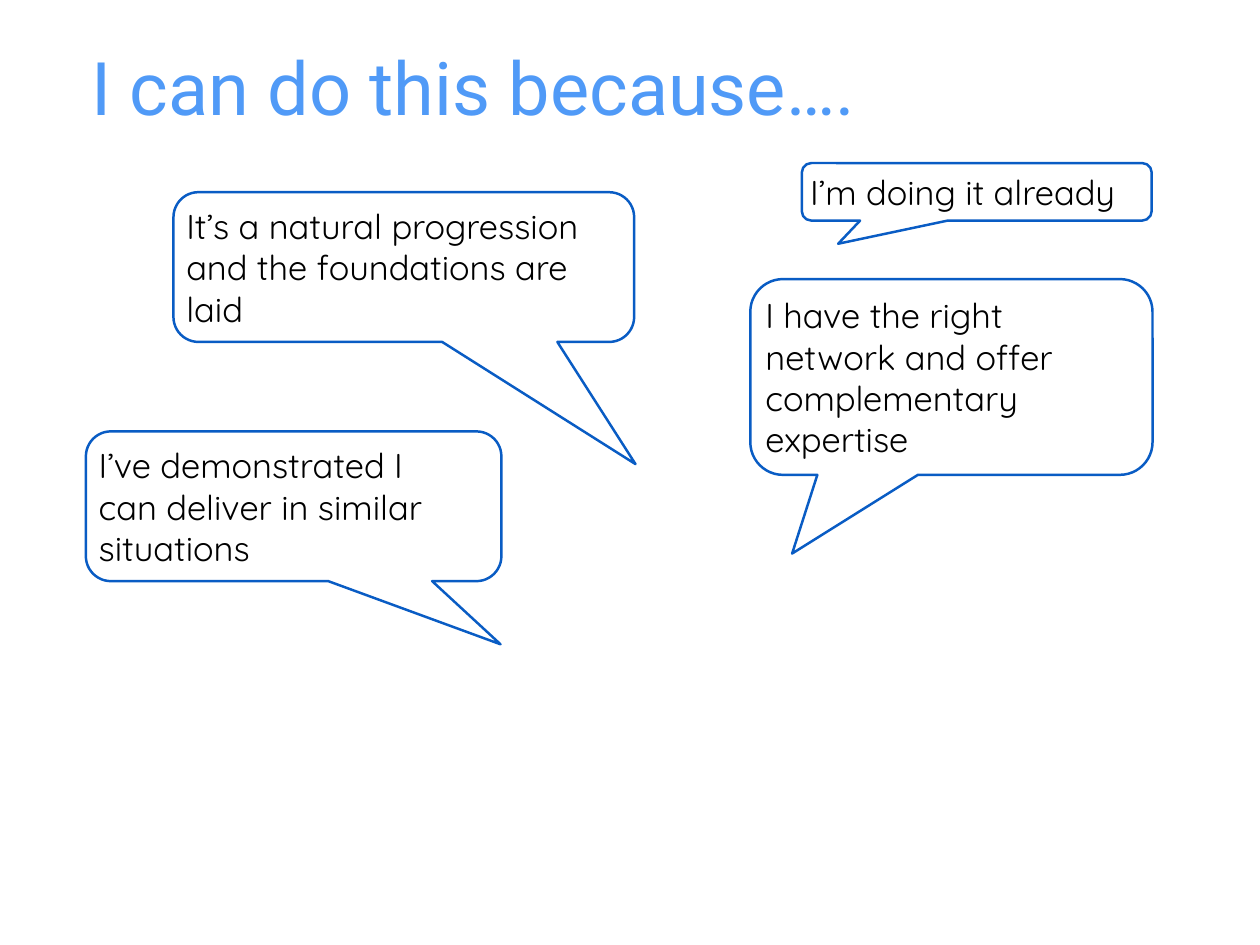
from pptx import Presentation
from pptx.dml.color import RGBColor
from pptx.enum.shapes import MSO_SHAPE
from pptx.enum.text import MSO_ANCHOR, PP_ALIGN
from pptx.util import Pt

CALLOUT = MSO_SHAPE.ROUNDED_RECTANGULAR_CALLOUT
TOP, MIDDLE = MSO_ANCHOR.TOP, MSO_ANCHOR.MIDDLE
LEFT = PP_ALIGN.LEFT
WHITE = RGBColor(0xFF, 0xFF, 0xFF)
BLACK = RGBColor(0x00, 0x00, 0x00)
OUTLINE_BLUE = RGBColor(0x09, 0x5C, 0xC4)
TITLE_BLUE = RGBColor(0x50, 0x9A, 0xF7)

# Grid of 1024 columns by 768 rows, one point each
COLUMNS, ROWS = 1024, 768
INSET = 4.5
CORNER = 0.167

prs = Presentation()
prs.slide_width, prs.slide_height = Pt(COLUMNS), Pt(ROWS)
slide = prs.slides.add_slide(prs.slide_layouts[6])


def write(shape, lines, anchor, font_name, size, color):
    frame = shape.text_frame
    frame.word_wrap = True
    frame.vertical_anchor = anchor
    for side in ("left", "right", "top", "bottom"):
        setattr(frame, f"margin_{side}", Pt(INSET))
    frame.text = "\n".join(lines)
    for paragraph in frame.paragraphs:
        paragraph.alignment = LEFT
        paragraph.font.name = font_name
        paragraph.font.size = Pt(size)
        paragraph.font.color.rgb = color


# Title
title = slide.shapes.add_textbox(Pt(70), Pt(29), Pt(870), Pt(150))
write(title, ["I can do this because…."], TOP, "Roboto", 60, TITLE_BLUE)

# Reasons: column, row, width, height, pointer tip, lines
reasons = [
    (651.6, 132.5, 284.4, 46.8, (-0.396, 0.902), ["I’m doing it already"]),
    (141, 156.2, 374.4, 121.7, (0.503, 1.316),
     ["It’s a natural progression and the foundations are laid"]),
    (609.8, 226.8, 326.9, 159.1, (-0.396, 0.902),
     ["I have the right", "network and offer", "complementary", "expertise"]),
    (69.8, 350.6, 337.7, 121.7, (0.498, 0.922),
     ["I’ve demonstrated I", "can deliver in similar", "situations"]),
]
for column, row, width, height, tip, lines in reasons:
    bubble = slide.shapes.add_shape(CALLOUT, Pt(column), Pt(row), Pt(width), Pt(height))
    for index, value in enumerate((*tip, CORNER)):
        bubble.adjustments[index] = value
    bubble.shadow.inherit = False
    bubble.fill.solid()
    bubble.fill.fore_color.rgb = WHITE
    bubble.line.color.rgb = OUTLINE_BLUE
    bubble.line.width = Pt(2)
    write(bubble, lines, MIDDLE, "Quicksand", 28, BLACK)

prs.save("out.pptx")
